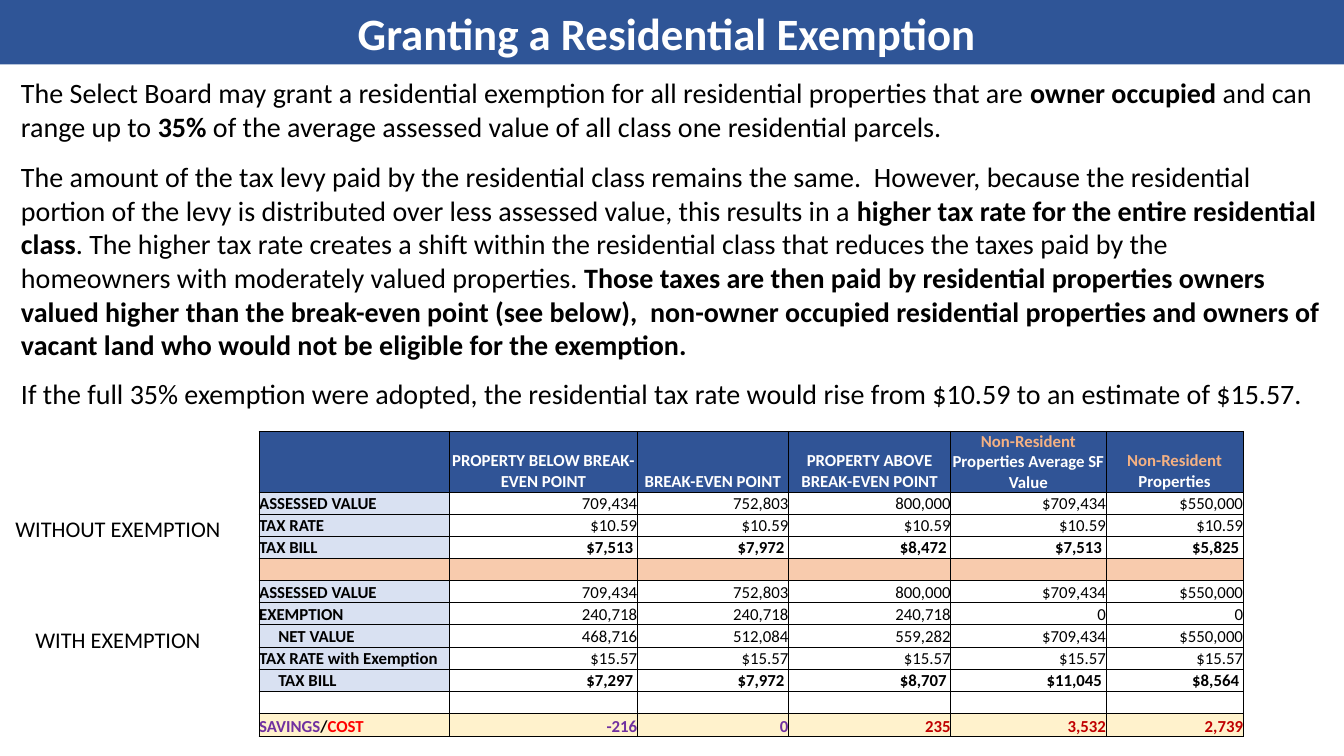
from lxml.etree import SubElement
from pptx import Presentation
from pptx.dml.color import RGBColor as RGB
from pptx.enum.shapes import MSO_SHAPE as Shape
from pptx.enum.text import MSO_ANCHOR as Anchor, PP_ALIGN as Align
from pptx.oxml.ns import qn
from pptx.util import Inches, Pt

HUES = {
    "bar": "2F5597", "head": "305496", "label": "D9E1F2", "gap": "F8CBAD",
    "sum": "FFF2CC", "orange": "F4B183", "purple": "7030A0", "red": "FF0000",
    "cost": "C00000", "white": "FFFFFF", "black": "000000",
}
WIDE, HIGH = 13.33, 7.5


def hue(name):
    return RGB.from_string(HUES[name])


def write(frame, paras, size, align=Align.LEFT):
    """Fill a frame; each paragraph is a list of (text, colour, bold)."""
    for i, parts in enumerate(paras):
        par = frame.add_paragraph() if i else frame.paragraphs[0]
        par.alignment = align
        for text, tone, bold in parts:
            run = par.add_run()
            run.text = text
            font = run.font
            font.name, font.size, font.bold = "Calibri", Pt(size), bold
            font.color.rgb = hue(tone)


deck = Presentation()
deck.slide_width, deck.slide_height = Inches(WIDE), Inches(HIGH)
slide = deck.slides.add_slide(deck.slide_layouts[6])
shapes = slide.shapes

# Title bar
bar = shapes.add_shape(Shape.RECTANGLE, 0, 0, Inches(WIDE), Inches(0.64))
bar.shadow.inherit = False
bar.fill.solid()
bar.fill.fore_color.rgb = hue("bar")
bar.line.fill.background()
title = "Granting a Residential Exemption "
write(bar.text_frame, [[(title, "white", True)]], 32, Align.CENTER)

# Explanation, with bold passages between asterisks
story = [
    "The Select Board may grant a residential exemption for all residential "
    "properties that are *owner occupied *and can range up to *35%* of the "
    "average assessed value of all class one residential parcels.",
    "The amount of the tax levy paid by the residential class remains the "
    "same.  However, because the residential portion of the levy is "
    "distributed over less assessed value, this results in a *higher tax rate "
    "for the entire residential class*. The higher tax rate creates a shift "
    "within the residential class that reduces the taxes paid by the "
    "homeowners with moderately valued properties. *Those taxes are then paid "
    "by residential properties owners valued higher than the break-even point "
    "(see below),  non-owner occupied residential properties and owners of "
    "vacant land who would not be eligible for the exemption.",
    "If the full 35% exemption were adopted, the residential tax rate would "
    "rise from $10.59 to an estimate of $15.57.",
]
body = shapes.add_textbox(Inches(0.11), Inches(0.7), Inches(13.12), Inches(3.45))
frame = body.text_frame
frame.word_wrap = True
write(frame, [[(bit, "black", i % 2 == 1) for i, bit in enumerate(text.split("*"))]
              for text in story], 20)
for par, space in zip(frame.paragraphs, (0, 12, 11)):
    par.space_before = Pt(space)

# Table content; a leading ">" marks an indented label
worth = ["709,434", "752,803", "800,000", "$709,434", "$550,000"]
rows = [
    ["", "PROPERTY BELOW BREAK-EVEN POINT", "BREAK-EVEN POINT",
     "PROPERTY ABOVE BREAK-EVEN POINT", "", ""],
    ["ASSESSED VALUE"] + worth,
    ["TAX RATE"] + ["$10.59"] * 5,
    ["TAX BILL", "$7,513", "$7,972", "$8,472", "$7,513", "$5,825"],
    [""] * 6,
    ["ASSESSED VALUE"] + worth,
    ["EXEMPTION"] + ["240,718"] * 3 + ["0"] * 2,
    [">NET VALUE", "468,716", "512,084", "559,282", "$709,434", "$550,000"],
    ["TAX RATE with Exemption"] + ["$15.57"] * 5,
    [">TAX BILL", "$7,297", "$7,972", "$8,707", "$11,045", "$8,564"],
    [""] * 6,
    ["", "-216", "0", "235", "3,532", "2,739"],
]
orange = ("Non-Resident", "orange", True)
mixed = {
    (0, 4): [[("Non-Resident ", "orange", True),
              ("Properties Average SF Value", "white", True)]],
    (0, 5): [[orange], [("Properties", "white", True)]],
    (11, 0): [[("SAVINGS", "purple", True), ("/", "black", True),
               ("COST", "red", True)]],
}
fills = {0: "head", 4: "gap", 10: "white", 11: "sum"}
widths = [1.89, 1.86, 1.5, 1.61, 1.54, 1.36]
step, top = 0.22, 4.28
heights = [0.6] + [step] * 10 + [0.23]
last, end = len(rows) - 1, len(widths) - 1

holder = shapes.add_table(len(rows), len(widths), Inches(2.57), Inches(top),
                          Inches(sum(widths)), Inches(sum(heights)))
table = holder.table
table.first_row = table.horz_banding = False
for col, width in zip(table.columns, widths):
    col.width = Inches(width)
for row, height in zip(table.rows, heights):
    row.height = Inches(height)

for r, row in enumerate(rows):
    bill = row[0].endswith("TAX BILL")
    for c, text in enumerate(row):
        cell = table.cell(r, c)
        cell.vertical_anchor = Anchor.BOTTOM
        cell.margin_top = cell.margin_bottom = 0
        cell.margin_left = Inches(0.19 if text.startswith(">") else 0)
        cell.margin_right = Inches(0.04 if bill and c else 0)

        props = cell._tc.get_or_add_tcPr()
        outer = {"L": c == 0, "R": c == end, "T": r == 0, "B": r == last}
        for side, edge in outer.items():
            line = SubElement(props, qn(f"a:ln{side}"), w=str(Pt(1 if edge else 0.5)))
            ink = SubElement(line, qn("a:solidFill"))
            SubElement(ink, qn("a:srgbClr"), val=HUES["black"])
        cell.fill.solid()
        cell.fill.fore_color.rgb = hue(fills.get(r, "white" if c else "label"))

        tone = "black"
        if r == 0:
            tone = "white"
        elif r == last:
            tone = "purple" if c < 3 else "cost"
        bold = c == 0 or r in (0, last) or bill
        align = Align.CENTER if r == 0 else Align.RIGHT if c else Align.LEFT
        plain = [[(text.lstrip(">"), tone, bold)]]
        if text or (r, c) in mixed:
            write(cell.text_frame, mixed.get((r, c), plain), 12, align)
        else:
            par = cell.text_frame.paragraphs[0]
            SubElement(par._p, qn("a:endParaRPr"), sz="1200")

# Labels beside the two halves of the table, five rows apart
for i, text in enumerate(["WITHOUT EXEMPTION", "WITH EXEMPTION"]):
    note = shapes.add_textbox(Inches(0.04), Inches(5.06 + 5 * step * i),
                              Inches(2.26), Inches(0.37))
    note.text_frame.word_wrap = False
    write(note.text_frame, [[(text, "black", False)]], 16, Align.CENTER)

deck.save("out.pptx")
